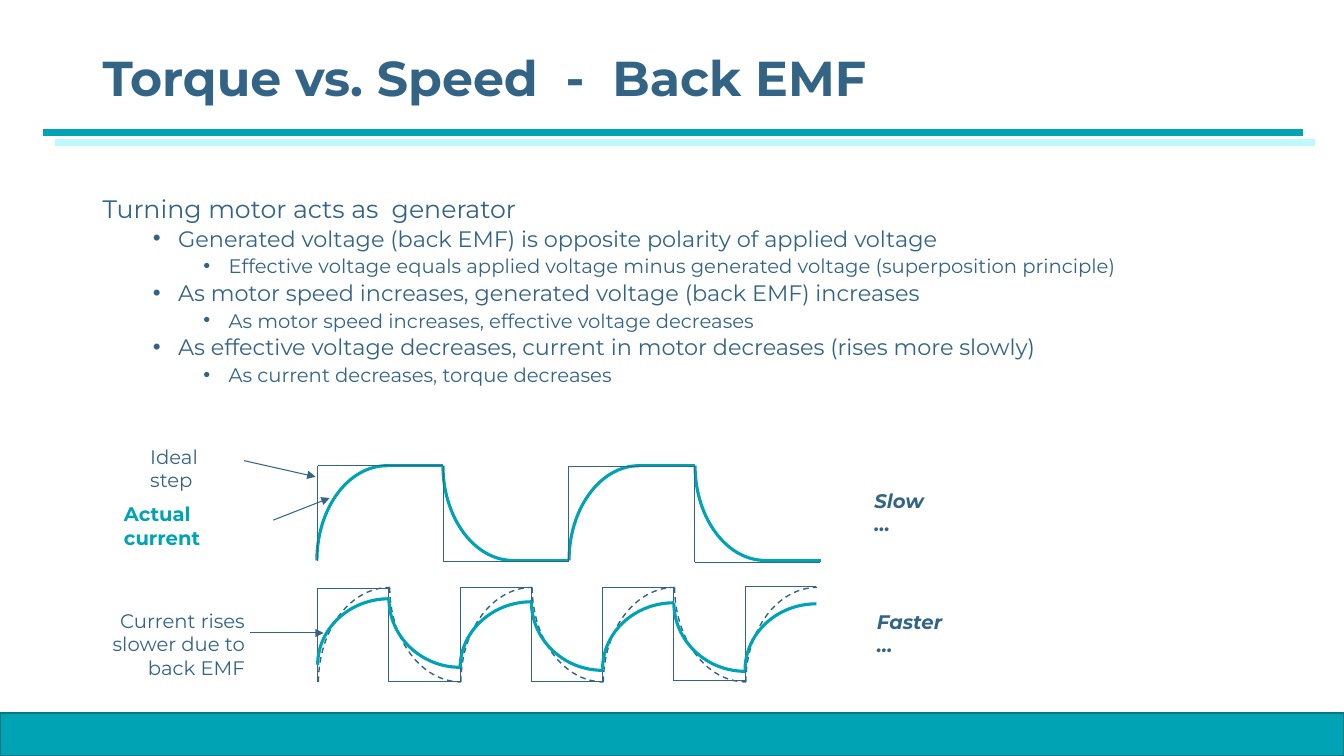
from dataclasses import dataclass

from lxml import etree
from pptx import Presentation
from pptx.dml.color import RGBColor
from pptx.enum.dml import MSO_LINE
from pptx.enum.shapes import MSO_CONNECTOR, MSO_SHAPE
from pptx.enum.text import MSO_ANCHOR, MSO_AUTO_SIZE, PP_ALIGN
from pptx.oxml.ns import qn
from pptx.util import Inches, Pt

DASH = MSO_LINE.DASH
STRAIGHT = MSO_CONNECTOR.STRAIGHT
RECT = MSO_SHAPE.RECTANGLE
MIDDLE = MSO_ANCHOR.MIDDLE
NO_FIT = MSO_AUTO_SIZE.NONE
LEFT, RIGHT = PP_ALIGN.LEFT, PP_ALIGN.RIGHT

FONT = "Montserrat"
COLORS = {"ink": "346485", "teal": "00A3B3", "edge": "007984", "pale": "BDF9FF"}
WIDE, HIGH = Inches(13.33), Inches(7.5)
PULL = 0.55  # handle length of a quarter ellipse


@dataclass
class Wave:
    """A square or curved wave; all lengths are percent of the slide."""
    left: float
    step: float
    count: int
    top: float
    low: float
    drift: float = 0


@dataclass
class Label:
    text: str
    left: float
    top: float
    wide: float
    high: float = 4.53
    color: str = "ink"
    bold: bool = False
    slant: bool = False
    align: PP_ALIGN = LEFT


@dataclass
class Arrow:
    x1: float
    y1: float
    x2: float
    y2: float


SLOW = Wave(23.63, 9.35, 4, 61.6, 74.2, 0.05)
SLOW_ARCS = Wave(23.58, 9.38, 4, 61.6, 74.13)
FAST = Wave(23.64, 5.3, 7, 77.8, 90.2, -0.03)
FAST_ARCS = Wave(23.7, 5.3, 7, 77.7, 90.2)
REAL_TOPS = [79.2, 79.6, 79.73, 79.87]
REAL_RISE, REAL_FALL = 8.73, 9.07
SLOW_BEND = 5.21

LABELS = [
    Label("Ideal step", 10.8, 58.13, 7),
    Label("Actual current", 8.85, 65.73, 10, color="teal", bold=True),
    Label("Slow…", 64.68, 64, 5.33, bold=True, slant=True),
    Label("Faster…", 64.88, 80, 6.38, bold=True, slant=True),
    Label("Current rises slower due to back EMF", 6.6, 79.87, 12, 10.8,
          align=RIGHT),
]
ARROWS = [
    Arrow(18.15, 60.93, 23.48, 63.07),
    Arrow(20.33, 68.8, 24.53, 65.87),
    Arrow(18.6, 83.73, 24.08, 83.73),
]
SIZES = [18, 16, 14]
POINTS = [
    (0, "Turning motor acts as  generator"),
    (1, "Generated voltage (back EMF) is opposite polarity of applied voltage"),
    (2, "Effective voltage equals applied voltage minus generated voltage "
        "(superposition principle)"),
    (1, "As motor speed increases, generated voltage (back EMF) increases"),
    (2, "As motor speed increases, effective voltage decreases"),
    (1, "As effective voltage decreases, current in motor decreases "
        "(rises more slowly)"),
    (2, "As current decreases, torque decreases"),
]


def across(share: float) -> int:
    return round(WIDE * share / 100)


def down(share: float) -> int:
    return round(HIGH * share / 100)


def rgb(name: str) -> RGBColor:
    return RGBColor.from_string(COLORS[name])


def child(parent, tag: str, **attrs: str):
    return etree.SubElement(parent, qn(tag), attrs)


def style(font, size: float, color: str = "ink", bold: bool = False) -> None:
    font.name, font.size, font.bold = FONT, Pt(size), bold
    font.color.rgb = rgb(color)


def place(shape, left: float, top: float, wide: float, high: float) -> None:
    shape.left, shape.top = across(left), down(top)
    shape.width, shape.height = across(wide), down(high)


def rule(slide, x1: float, y1: float, x2: float, y2: float,
         color: str = "ink", width: float = 0.75):
    """Draw a line; return it with its empty effect list."""
    line = slide.shapes.add_connector(
        STRAIGHT, across(x1), down(y1), across(x2), down(y2))
    line.line.color.rgb = rgb(color)
    line.line.width = Pt(width)
    return line, child(line._element.spPr, "a:effectLst")


def arc(slide, left: float, wide: float, start: float, end: float,
        color: str = "teal", width: float = 2.25, dashed: bool = False) -> None:
    """Draw a quarter ellipse that leaves start upright and meets end level."""
    spots = [(left, start), (left, start + (end - start) * PULL),
             (left + wide * (1 - PULL), end), (left + wide, end)]
    spots = [(across(x), down(y)) for x, y in spots]
    pen = slide.shapes.build_freeform(*spots[0])
    pen.add_line_segments(spots[1:], close=False)
    curve = pen.convert_to_shape()
    legs = list(curve._element.iter(qn("a:lnTo")))
    track = legs[0].getparent()
    bend = child(track, "a:cubicBezTo")
    for leg in legs:
        bend.append(leg[0])
        track.remove(leg)
    curve.shadow.inherit = False
    curve.fill.background()
    curve.line.color.rgb = rgb(color)
    curve.line.width = Pt(width)
    if dashed:
        curve.line.dash_style = DASH


def steps(slide, wave: Wave) -> None:
    for i in range(wave.count):
        x = wave.left + i * wave.step
        top, low = wave.top + i * wave.drift, wave.low + i * wave.drift
        level = low if i % 2 else top
        rule(slide, x, low, x, top)
        rule(slide, x, level, x + wave.step, level)


def slow(slide) -> None:
    wave = SLOW_ARCS
    for i in range(wave.count):
        x = wave.left + i * wave.step
        ends = (wave.top, wave.low) if i % 2 else (wave.low, wave.top)
        arc(slide, x, SLOW_BEND, *ends)
        rule(slide, x + SLOW_BEND, ends[1], x + wave.step, ends[1], "teal", 2.25)
    steps(slide, SLOW)


def fast(slide) -> None:
    wave = FAST_ARCS
    steps(slide, FAST)
    for i in range(wave.count):
        x = wave.left + i * wave.step
        ends = (wave.top, wave.low) if i % 2 else (wave.low, wave.top)
        arc(slide, x, wave.step, *ends, color="ink", width=1, dashed=True)
        top = REAL_TOPS[i // 2]
        ends = (top, top + REAL_FALL) if i % 2 else (top + REAL_RISE, top)
        arc(slide, FAST.left + i * FAST.step, FAST.step, *ends)


def frame(slide) -> None:
    """Draw the header rule with its pale shadow, and the footer band."""
    band = slide.shapes.add_shape(RECT, 0, 0, 0, 0)
    place(band, 0, 94.3, 100, 5.7)
    band.shadow.inherit = False
    band.fill.solid()
    band.fill.fore_color.rgb = rgb("teal")
    band.line.color.rgb = rgb("edge")
    band.line.width = Pt(1)
    _, effects = rule(slide, 3.18, 17.5, 96.98, 17.5, "teal", 5)
    shade = child(effects, "a:outerShdw", blurRad="0", dist=str(Pt(11)),
                  dir="2400000", algn="ctr", rotWithShape="0")
    child(shade, "a:srgbClr", val=COLORS["pale"])


def texts(slide) -> None:
    title, body = slide.placeholders
    place(title, 6.88, 5.33, 86.25, 10.8)
    place(body, 6.88, 19.76, 86.25, 37.87)
    for box in (title.text_frame, body.text_frame):
        box.vertical_anchor = MIDDLE
        box.auto_size = NO_FIT
    head = title.text_frame.paragraphs[0]
    head.text = "Torque vs. Speed  -  Back EMF"
    head.alignment, head.line_spacing = LEFT, 0.9
    style(head.font, 35, bold=True)
    for i, (level, text) in enumerate(POINTS):
        para = body.text_frame.add_paragraph() if i else body.text_frame.paragraphs[0]
        para.text, para.level = text, level
        props = para._p.get_or_add_pPr()
        props.set("marL", str(Inches(level * 0.5 + 0.25 if level else 0)))
        props.set("indent", str(Inches(-0.25 if level else 0)))
        if level:
            child(props, "a:buFont", typeface="Arial")
            child(props, "a:buChar", char="•")
        else:
            child(props, "a:buNone")
        para.line_spacing, para.space_before = 0.8, Pt(5 if i else 0)
        style(para.font, SIZES[level])


def tag(slide, item: Label) -> None:
    box = slide.shapes.add_textbox(0, 0, 0, 0)
    place(box, item.left, item.top, item.wide, item.high)
    text = box.text_frame
    text.word_wrap = True
    text.margin_left = text.margin_right = Inches(0.05)
    text.margin_top = text.margin_bottom = Inches(0.05)
    para = text.paragraphs[0]
    para.text, para.alignment = item.text, item.align
    style(para.font, 14, item.color, item.bold)
    para.font.italic = item.slant


def main() -> None:
    deck = Presentation()
    deck.slide_width, deck.slide_height = WIDE, HIGH
    slide = deck.slides.add_slide(deck.slide_layouts[1])
    for draw in (frame, texts, slow, fast):
        draw(slide)
    for item in LABELS:
        tag(slide, item)
    for a in ARROWS:
        line, _ = rule(slide, a.x1, a.y1, a.x2, a.y2)
        child(line.line._get_or_add_ln(), "a:tailEnd", type="triangle")
    deck.save("out.pptx")


if __name__ == "__main__":
    main()
